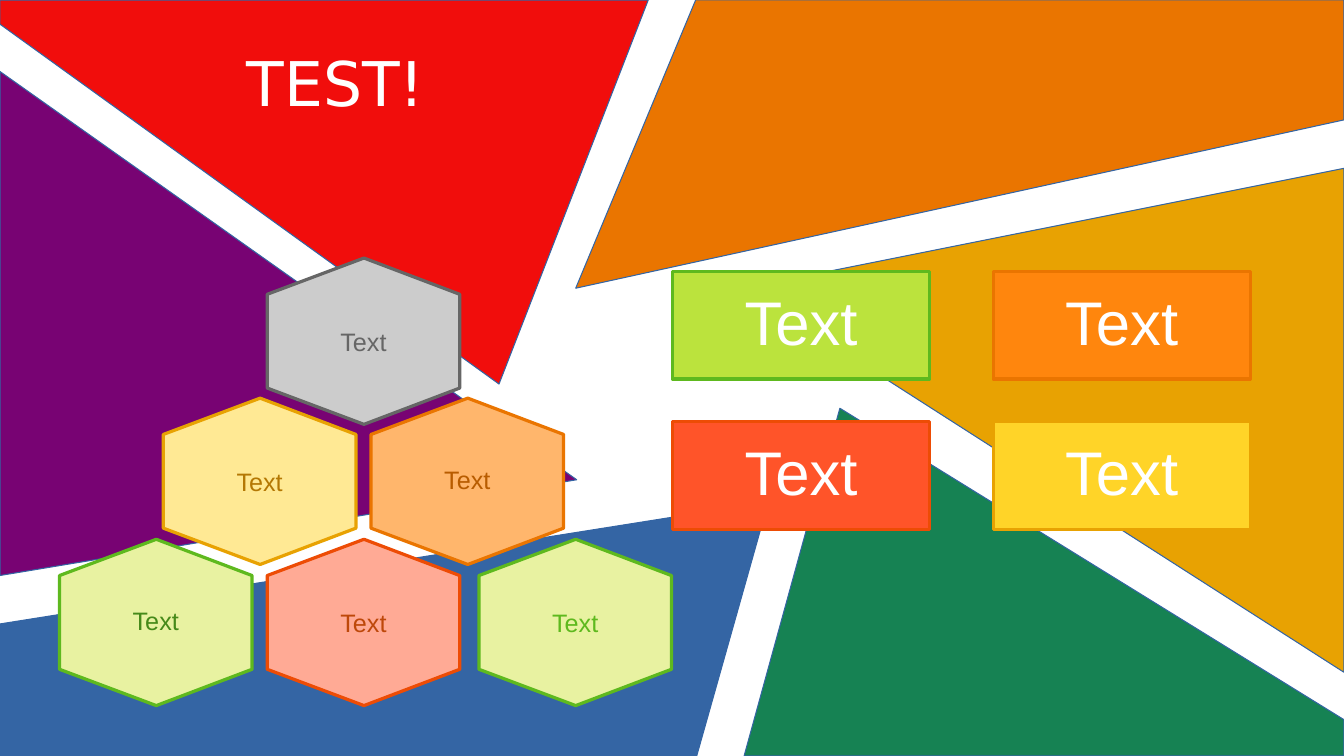
"""Build the TEST! slide: coloured panels, a hexagon pyramid and four text boxes."""
from pptx import Presentation
from pptx.dml.color import RGBColor as Rgb
from pptx.enum.shapes import MSO_SHAPE as Preset
from pptx.enum.text import MSO_ANCHOR as Anchor, MSO_AUTO_SIZE as AutoSize, PP_ALIGN as Align
from pptx.util import Pt

PX = 9144
WIDTH, HEIGHT = 1333, 750

THEME = {
    "red": "F10D0C", "orange": "EA7500", "gold": "E8A202", "green": "168253",
    "blue": "3465A4", "purple": "780373", "white": "FFFFFF",
    "lime": "5EB91E", "brick": "ED4C05", "gray": "666666",
    "lime_box": "BBE33D", "orange_box": "FF860D", "brick_box": "FF5429", "gold_box": "FFD428",
    "pale_gray": "CCCCCC", "pale_gold": "FFE994", "pale_orange": "FFB66C",
    "pale_lime": "E8F2A1", "pale_brick": "FFAA95",
    "gold_text": "B47804", "orange_text": "B85C00", "lime_text": "468A1A", "brick_text": "BE480A",
    "display_size": 44, "label_size": 18, "panel_line": 0.75, "shape_line": 2.3,
    "title_font": "DejaVu Sans", "body_font": "Arial",
}


def paint(shape, fill, line, weight):
    shape.shadow.inherit = False
    shape.fill.solid()
    shape.fill.fore_color.rgb = Rgb.from_string(THEME[fill])
    shape.line.color.rgb = Rgb.from_string(THEME[line])
    shape.line.width = Pt(THEME[weight])


def write(shape, wording, color, size, font, spacing, after, insets):
    frame = shape.text_frame
    frame.text = wording
    left, top, right, bottom = (inset * PX for inset in insets)
    paragraph = frame.paragraphs[0]
    formats = {
        frame: {"word_wrap": True, "auto_size": AutoSize.NONE, "vertical_anchor": Anchor.MIDDLE,
                "margin_left": left, "margin_top": top,
                "margin_right": right, "margin_bottom": bottom},
        paragraph: {"alignment": Align.CENTER, "line_spacing": spacing,
                    "space_before": Pt(0.3), "space_after": Pt(after)},
        paragraph.runs[0].font: {"size": Pt(THEME[size]), "name": THEME[font]},
    }
    for target, values in formats.items():
        for name, value in values.items():
            setattr(target, name, value)
    paragraph.runs[0].font.color.rgb = Rgb.from_string(THEME[color])


deck = Presentation()
deck.slide_width, deck.slide_height = WIDTH * PX, HEIGHT * PX
slide = deck.slides.add_slide(deck.slide_layouts[5])
shapes = slide.shapes

panels = [
    ("red", [(0, 0), (0, 24), (495, 381), (643, 0)]),
    ("orange", [(WIDTH, 0), (690, 0), (571, 286), (WIDTH, 119)]),
    ("gold", [(WIDTH, 667), (WIDTH, 167), (738, 286)]),
    ("green", [(WIDTH, HEIGHT), (WIDTH, 714), (833, 405), (738, HEIGHT)]),
    ("blue", [(0, HEIGHT), (691, HEIGHT), (762, 498), (0, 619)]),
    ("purple", [(0, 71), (0, 571), (572, 476)]),
]
for color, corners in panels:
    outline = shapes.build_freeform(*corners[0], scale=PX)
    outline.add_line_segments(corners[1:], close=True)
    paint(outline.convert_to_shape(), color, "blue", "panel_line")

title = shapes.title
title.left, title.top, title.width, title.height = (n * PX for n in (71, 24, 524, 119))
write(title, "TEST!", "white", "display_size", "title_font", 0.98, 0.3, (0, 1, 0, 0))
title.element.getparent().append(title.element)

HEXAGON = [(0, 0), (95, 36), (95, 129), (0, 165), (-96, 129), (-96, 36)]
pyramid = [
    (258, 395, "pale_gold", "gold", "gold_text", 1.0),
    (155, 535, "pale_lime", "lime", "lime_text", 0.9),
    (464, 395, "pale_orange", "orange", "orange_text", 0.9),
    (361, 535, "pale_brick", "brick", "brick_text", 1.0),
    (361, 256, "pale_gray", "gray", "gray", 1.0),
    (571, 535, "pale_lime", "lime", "lime", 1.0),
]
for center, top, fill, line, color, spacing in pyramid:
    corners = [(center + dx, top + dy) for dx, dy in HEXAGON]
    outline = shapes.build_freeform(*corners[0], scale=PX)
    outline.add_line_segments(corners[1:], close=True)
    cell = outline.convert_to_shape()
    paint(cell, fill, line, "shape_line")
    write(cell, "Text", color, "label_size", "body_font", spacing, 0.3, (31, 35, 31, 35))

for index, hue in enumerate(["lime", "orange", "brick", "gold"]):
    row, column = divmod(index, 2)
    box = shapes.add_shape(Preset.RECTANGLE, (667 + 318 * column) * PX, (269 + 149 * row) * PX,
                           255 * PX, 107 * PX)
    paint(box, f"{hue}_box", hue, "shape_line")
    write(box, "Text", "white", "display_size", "body_font", 0.9, 6.5, (27, 27, 27, 27))

deck.save("out.pptx")
